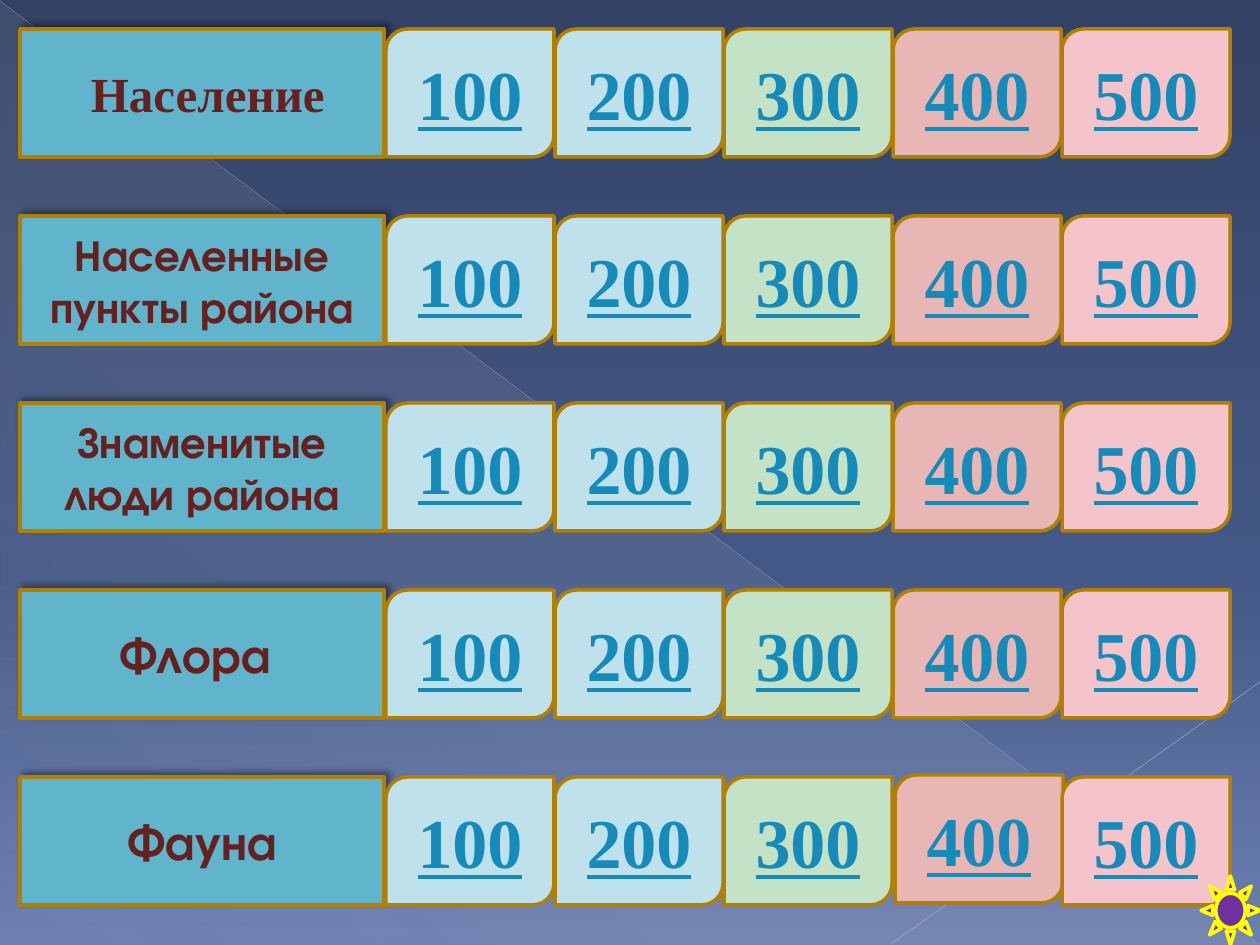
from lxml.etree import SubElement
from pptx import Presentation
from pptx.dml.color import RGBColor
from pptx.enum.shapes import MSO_CONNECTOR, MSO_SHAPE
from pptx.enum.text import MSO_ANCHOR, PP_ALIGN
from pptx.oxml.ns import qn
from pptx.util import Emu, Pt

SANS = "TeX Gyre Adventor"
SERIF = "Times New Roman"
GOLD = "B28000"
MAROON = "672020"
TOP, PITCH, HIGH = 29, 187, 128
LEFT, STEP, WIDE = 386, 169, 168
TOPICS = [
    [(" ", 24, SANS), ("Население", 28, SERIF)],
    [("Населенные пункты района", 25, SANS)],
    [("Знаменитые люди района", 25, SANS)],
    [("Флора ", 28, SANS)],
    [("Фауна", 28, SANS)],
]
PRICES = [("100", "BFE1EB"), ("200", "BFE1EB"), ("300", "C4E2C5"),
          ("400", "E8B6B5"), ("500", "F5C4CB")]
NUDGE = {(4, 3): (2, -2)}


def px(size):
    return Emu(round(size * 914400 / 126))


def color(text):
    return RGBColor.from_string(text)


def node(root, tag, **items):
    return SubElement(root, qn(tag), {key: str(val) for key, val in items.items()})


def tint(root, rgb, alpha):
    node(node(root, "a:srgbClr", val=rgb), "a:alpha", val=alpha * 1000)


def blend(root, stops, angle):
    old = root.find(".//" + qn("a:solidFill"))
    fill = old.makeelement(qn("a:gradFill"), {"rotWithShape": "1"})
    old.getparent().replace(old, fill)
    group = node(fill, "a:gsLst")
    for place, rgb, alpha in stops:
        tint(node(group, "a:gs", pos=place * 1000), rgb, alpha)
    node(fill, "a:lin", ang=angle * 60000, scaled=0)


def add_box(slide, kind, box, fill, edge):
    shape = slide.shapes.add_shape(kind, *map(px, box))
    shape.shadow.inherit = False
    shape.fill.solid()
    shape.fill.fore_color.rgb = color(fill)
    if edge:
        shape.line.color.rgb = color(edge)
        shape.line.width = Pt(2)
    else:
        shape.line.fill.background()
    return shape


def add_text(shape, runs, rgb, under=False):
    frame = shape.text_frame
    frame.word_wrap = True
    frame.vertical_anchor = MSO_ANCHOR.MIDDLE
    para = frame.paragraphs[0]
    para.alignment = PP_ALIGN.CENTER
    for text, size, face in runs:
        run = para.add_run()
        run.text = text
        run.font.name = face
        run.font.size = Pt(size)
        run.font.bold = True
        run.font.underline = under
        run.font.color.rgb = color(rgb)


def add_line(slide, ends, rgb, width, alpha):
    line = slide.shapes.add_connector(MSO_CONNECTOR.STRAIGHT, *map(px, ends))
    line.line.color.rgb = color(rgb)
    line.line.width = Pt(width)
    root = line.element.spPr
    node(root.find(".//" + qn("a:srgbClr")), "a:alpha", val=alpha * 1000)
    node(root, "a:effectLst")


def add_back(slide):
    slide.background.fill.solid()
    blend(slide.element.find(".//" + qn("p:bg")),
          [(0, "334265", 100), (60, "445887", 100), (100, "6C7FB1", 100)], 90)
    wedge = add_box(slide, MSO_SHAPE.RIGHT_TRIANGLE, (1, 2, 1258, 942), "D4D4D6", None)
    blend(wedge.element.spPr,
          [(0, "D4D4D6", 10), (70, "D4D4D6", 8), (100, "D4D4D6", 1)], 133)
    add_line(slide, (0, 1, 1259, 944), "B9BDC8", 0.39, 35)
    add_line(slide, (1260, 682, 891, 944), "C1C4CE", 0.47, 45)


def add_topic(slide, top, runs):
    shape = add_box(slide, MSO_SHAPE.RECTANGLE, (20, top, 364, HIGH), "60B5CC", GOLD)
    shade = node(shape.element.spPr.find(qn("a:effectLst")), "a:outerShdw",
                 blurRad=Pt(4), dist=Pt(3), dir=315 * 60000, algn="bl", rotWithShape=0)
    tint(shade, "000000", 40)
    add_text(shape, runs, MAROON)


def add_price(slide, left, top, text, fill):
    shape = add_box(slide, MSO_SHAPE.ROUND_2_DIAG_RECTANGLE,
                    (left, top, WIDE, HIGH), fill, GOLD)
    add_text(shape, [(text, 40, SERIF)], "168BBA", True)


def main():
    deck = Presentation()
    deck.slide_width, deck.slide_height = px(1260), px(945)
    slide = deck.slides.add_slide(deck.slide_layouts[6])
    add_back(slide)
    for row, runs in enumerate(TOPICS):
        top = TOP + row * PITCH
        add_topic(slide, top, runs)
        for col, (text, fill) in enumerate(PRICES):
            right, down = NUDGE.get((row, col), (0, 0))
            add_price(slide, LEFT + col * STEP + right, top + down, text, fill)
    add_box(slide, MSO_SHAPE.SUN, (1201, 876, 59, 69), "7030A0", "FFFF00")
    deck.save("out.pptx")


if __name__ == "__main__":
    main()
